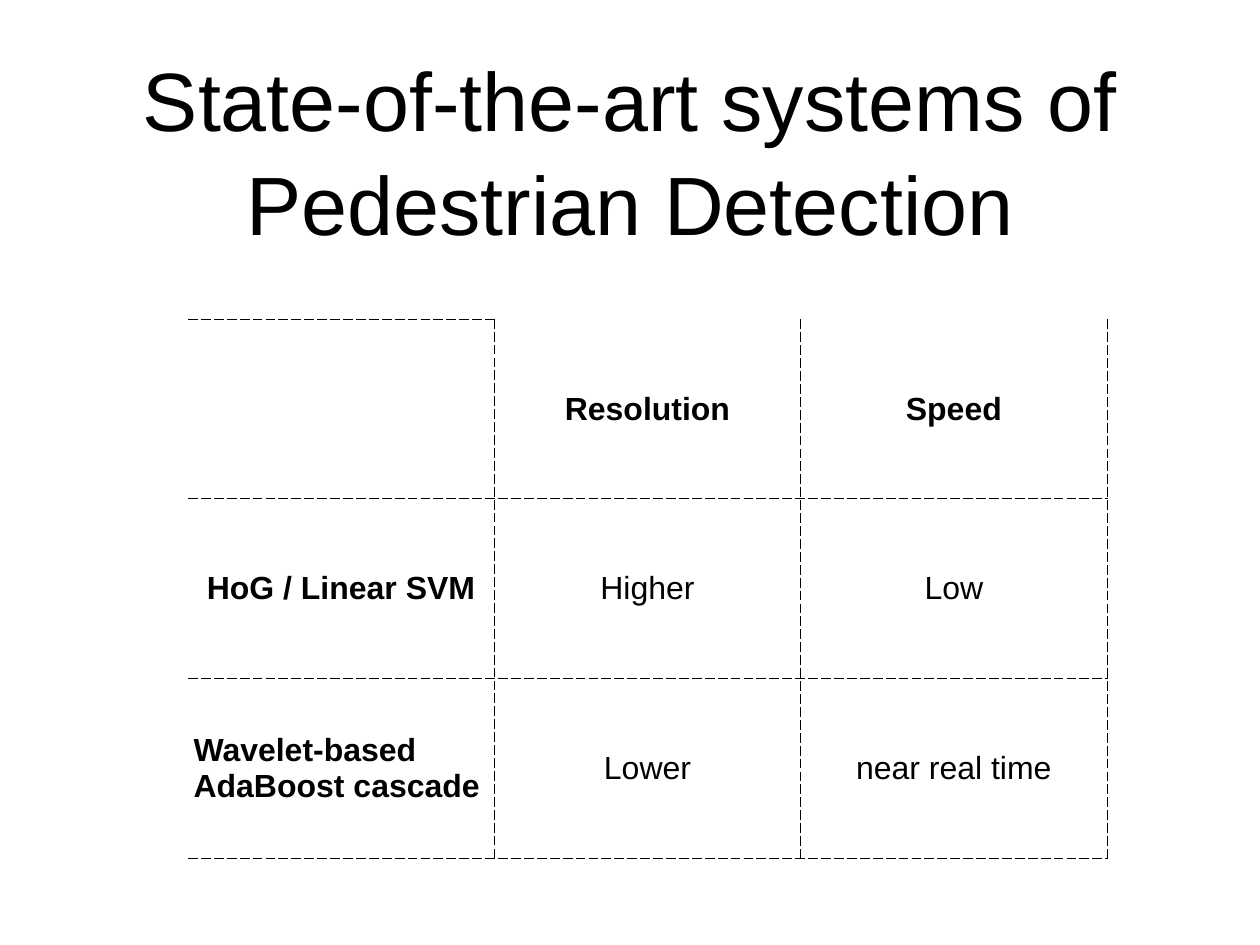
"""Build the slide comparing pedestrian detection systems."""
from lxml.etree import SubElement
from pptx import Presentation
from pptx.dml.color import RGBColor
from pptx.enum.text import MSO_ANCHOR as Anchor, PP_ALIGN as Align
from pptx.oxml.ns import qn
from pptx.util import Pt

BLACK = RGBColor(0, 0, 0)
FONT = "Arial"
COLUMN_WIDTH, ROW_HEIGHT, MARGIN = 249, 146, 4.5
SYSTEMS = [
    ["", "Resolution", "Speed"],
    ["HoG / Linear SVM", "Higher", "Low"],
    ["Wavelet-based AdaBoost cascade", "Lower", "near real time"],
]


def write(paragraph, text, size, bold=False):
    run = paragraph.add_run()
    run.text = text
    run.font.name, run.font.size, run.font.bold = FONT, Pt(size), bold
    run.font.color.rgb = BLACK


def add_border(cell, edge, visible):
    properties = cell._tc.get_or_add_tcPr()
    line = SubElement(properties, qn(f"a:ln{edge}"), w=str(Pt(1)))
    if visible:
        fill = SubElement(line, qn("a:solidFill"))
        SubElement(fill, qn("a:srgbClr"), val=str(BLACK))
        SubElement(line, qn("a:prstDash"), val="dash")
    else:
        SubElement(line, qn("a:noFill"))


deck = Presentation()
deck.slide_width, deck.slide_height = Pt(1024), Pt(768)
slide = deck.slides.add_slide(deck.slide_layouts[6])

title = slide.shapes.add_textbox(Pt(75), Pt(35), Pt(874), Pt(170)).text_frame
title.word_wrap = True
title.vertical_anchor = Anchor.MIDDLE
title.margin_left = title.margin_right = title.margin_top = title.margin_bottom = 0
heading = title.paragraphs[0]
heading.alignment = Align.CENTER
heading.line_spacing = 1.05
write(heading, "State-of-the-art systems of Pedestrian Detection", 67.2)

comparison = slide.shapes.add_table(
    3, 3, Pt(152.8), Pt(259.5), Pt(3 * COLUMN_WIDTH), Pt(3 * ROW_HEIGHT)).table
comparison.first_row = comparison.horz_banding = False
for column in comparison.columns:
    column.width = Pt(COLUMN_WIDTH)
for row in comparison.rows:
    row.height = Pt(ROW_HEIGHT)

for r, system in enumerate(SYSTEMS):
    for c, value in enumerate(system):
        cell = comparison.cell(r, c)
        cell.vertical_anchor = Anchor.MIDDLE
        cell.margin_left = cell.margin_right = Pt(MARGIN)
        cell.margin_top = cell.margin_bottom = Pt(MARGIN)
        add_border(cell, "L", c > 0)
        add_border(cell, "R", True)
        add_border(cell, "T", r > 0 or c == 0)
        add_border(cell, "B", True)
        cell.fill.background()
        if value:
            entry = cell.text_frame.paragraphs[0]
            entry.alignment = Align.LEFT if (r, c) == (2, 0) else Align.CENTER
            write(entry, value, 26, bold=r == 0 or c == 0)

deck.save("out.pptx")
